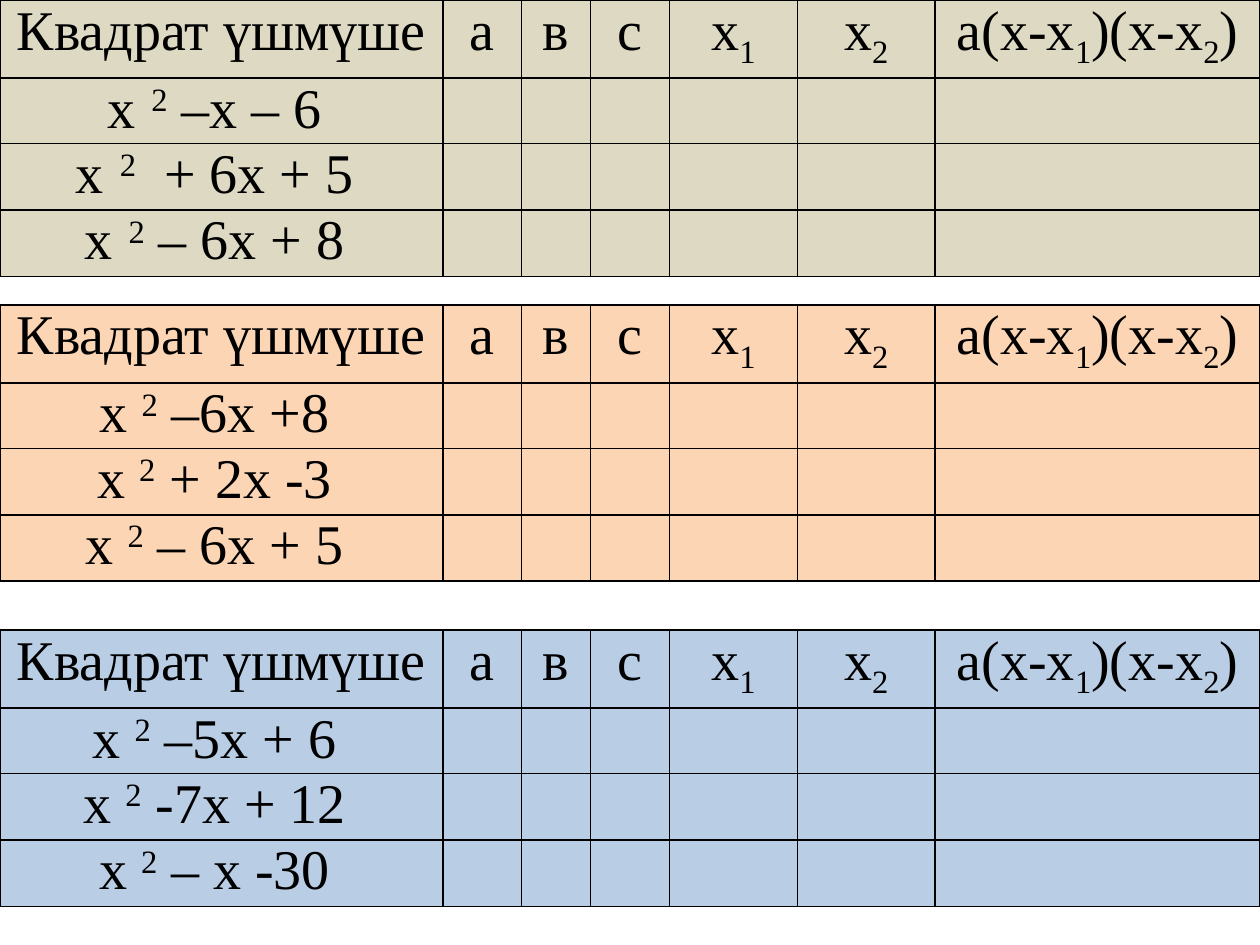
import pptx
import pptx.util
import pptx.dml.color
import pptx.enum.text
import pptx.oxml.ns
from dataclasses import dataclass
from lxml import etree

Pt = pptx.util.Pt
RGB = pptx.dml.color.RGBColor.from_string


@dataclass(frozen=True)
class Theme:
    font: str = "Times New Roman"
    size: float = 32
    ink: str = "000000"
    border: float = 1
    side_margin: float = 5
    subscript: int = -25
    superscript: int = 30
    khaki: str = "DDD9C3"
    peach: str = "FCD5B5"
    blue: str = "B9CDE5"


class Worksheet:
    def __init__(self, slide, theme):
        self.slide = slide
        self.theme = theme

    def table(self, top, widths, heights, rows, color):
        frame = self.slide.shapes.add_table(
            len(heights), len(widths), 0, Pt(top), Pt(sum(widths)), Pt(sum(heights)))
        grid = frame.table
        grid.first_row = grid.horz_banding = False
        for column, width in zip(grid.columns, widths):
            column.width = Pt(width)
        for row, height in zip(grid.rows, heights):
            row.height = Pt(height)
        for cell in grid.iter_cells():
            self.cell_style(cell, color)
        for r, row in enumerate(rows):
            for c, parts in enumerate(row):
                self.formula(grid.cell(r, c), parts)

    def cell_style(self, cell, color):
        properties = cell._tc.get_or_add_tcPr()
        qn = pptx.oxml.ns.qn
        for side in ("a:lnL", "a:lnR", "a:lnT", "a:lnB"):
            line = etree.SubElement(properties, qn(side), w=str(Pt(self.theme.border)))
            ink = etree.SubElement(line, qn("a:solidFill"))
            etree.SubElement(ink, qn("a:srgbClr"), val=self.theme.ink)
        cell.fill.solid()
        cell.fill.fore_color.rgb = RGB(color)
        cell.margin_left = cell.margin_right = Pt(self.theme.side_margin)
        cell.margin_top = cell.margin_bottom = 0

    def formula(self, cell, parts):
        paragraph = cell.text_frame.paragraphs[0]
        paragraph.alignment = pptx.enum.text.PP_ALIGN.CENTER
        paragraph.font.name = self.theme.font
        paragraph.font.size = Pt(self.theme.size)
        paragraph.font.color.rgb = RGB(self.theme.ink)
        for text, baseline in parts:
            run = paragraph.add_run()
            run.text = text
            if baseline:
                run._r.get_or_add_rPr().set("baseline", str(baseline * 1000))


def main():
    theme = Theme()
    deck = pptx.Presentation()
    deck.slide_width, deck.slide_height = Pt(720), Pt(540)
    sheet = Worksheet(deck.slides.add_slide(deck.slide_layouts[6]), theme)

    widths = [253.2, 44.8, 39.4, 45.2, 73.1, 78.8, 185.5]
    heights = [44.6, 37.4, 38, 38]
    first_root, second_root = ("1", theme.subscript), ("2", theme.subscript)
    header = [[(label, 0)] for label in ("Квадрат үшмүше", "а", "в", "с")]
    header += [
        [("х", 0), first_root],
        [("х", 0), second_root],
        [("а(х-х", 0), first_root, (")(х-х", 0), second_root, (")", 0)],
    ]
    exercises = [
        (0, theme.khaki, "х", "  2", [" –х – 6 ", "  + 6х + 5 ", " – 6х + 8 "]),
        (174.2, theme.peach, "х ", "2", [" –6х +8 ", " + 2х -3 ", " – 6х + 5 "]),
        (360, theme.blue, "х ", "2", [" –5х + 6 ", " -7х + 12 ", " – х -30 "]),
    ]
    for top, color, variable, power, endings in exercises:
        trinomials = [[[(variable, 0), (power, theme.superscript), (ending, 0)]]
                      for ending in endings]
        sheet.table(top, widths, heights, [header] + trinomials, color)

    deck.save("out.pptx")


if __name__ == "__main__":
    main()
